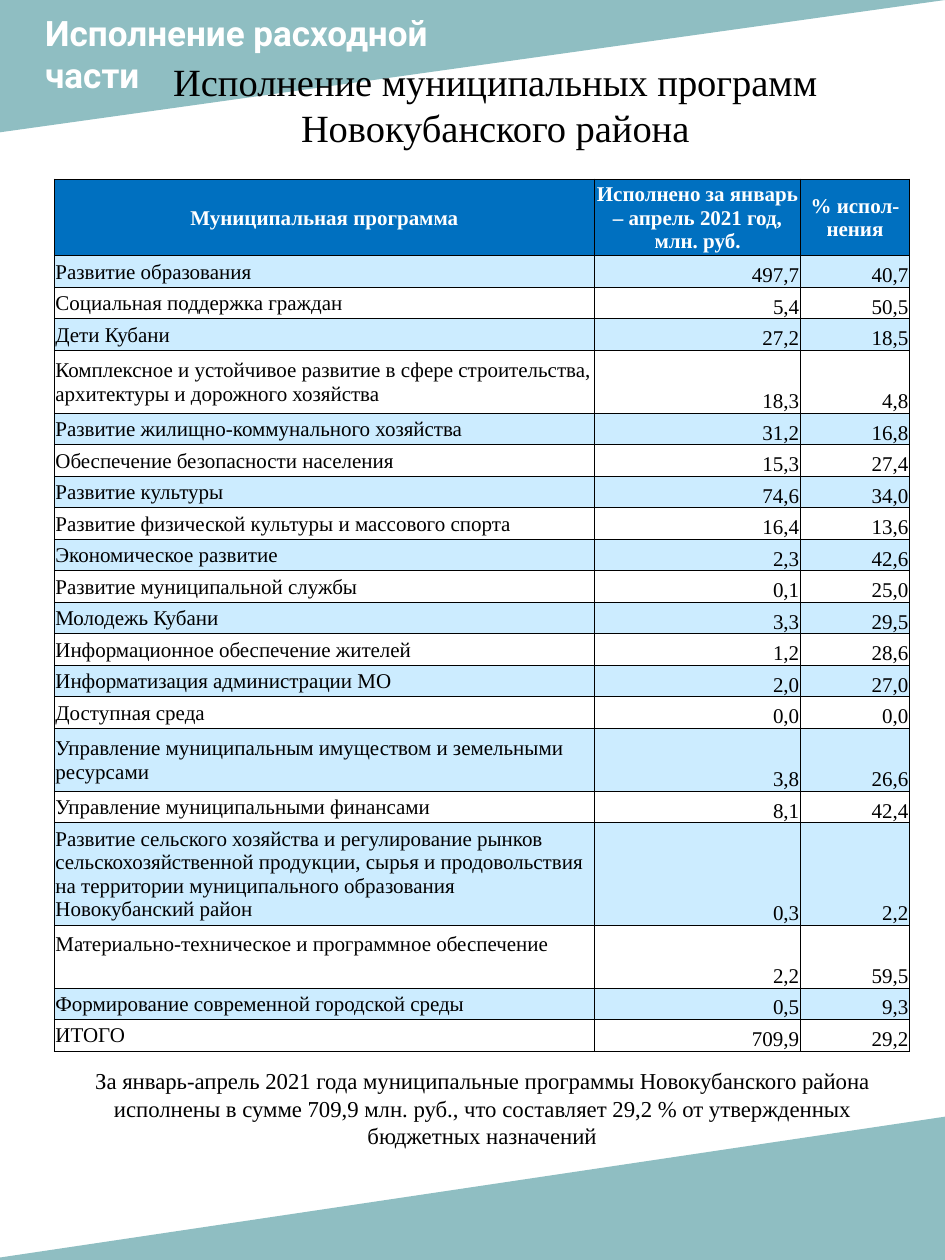
from lxml import etree
from pptx import Presentation
from pptx import util as u
from pptx.dml.color import RGBColor
from pptx.enum import shapes, text
from pptx.oxml import ns

Pt = u.Pt
TEAL = RGBColor(0x51, 0x9A, 0xA0)
BLUE = RGBColor(0x00, 0x70, 0xC0)
PALE_BLUE = RGBColor(0xCC, 0xEC, 0xFF)
WHITE = RGBColor(0xFF, 0xFF, 0xFF)
BLACK = RGBColor(0x00, 0x00, 0x00)
SERIF = "Times New Roman"
LEFT, CENTER, RIGHT = text.PP_ALIGN.LEFT, text.PP_ALIGN.CENTER, text.PP_ALIGN.RIGHT
MIDDLE, BOTTOM = text.MSO_ANCHOR.MIDDLE, text.MSO_ANCHOR.BOTTOM


def write_text(frame, content, alignment, color, font_format):
    frame.text = content
    for paragraph in frame.paragraphs:
        paragraph.alignment = alignment
        for run in paragraph.runs:
            for name, value in font_format.items():
                setattr(run.font, name, value)
            run.font.color.rgb = color


def add_borders(cell):
    properties = cell._tc.get_or_add_tcPr()
    for position, side in enumerate(("lnL", "lnR", "lnT", "lnB")):
        line = etree.Element(ns.qn(f"a:{side}"), w=str(Pt(0.5)))
        fill = etree.SubElement(line, ns.qn("a:solidFill"))
        etree.SubElement(fill, ns.qn("a:srgbClr"), val=str(BLACK))
        properties.insert(position, line)


presentation = Presentation()
presentation.slide_width, presentation.slide_height = Pt(540), Pt(720)
slide = presentation.slides.add_slide(presentation.slide_layouts[6])

# Translucent corner triangles
for box, flip in (((0, 0, 540, 75.6), "flipH"), ((-9.36, 637.92, 550.8, 82.08), "flipV")):
    triangle = slide.shapes.add_shape(shapes.MSO_SHAPE.RIGHT_TRIANGLE, *map(Pt, box))
    triangle.shadow.inherit = False
    triangle.rotation = 180
    triangle._element.spPr.xfrm.set(flip, "1")
    triangle.fill.solid()
    triangle.fill.fore_color.rgb = TEAL
    color = triangle._element.spPr.find(ns.qn("a:solidFill"))[0]
    etree.SubElement(color, ns.qn("a:alpha"), val="64000")
    triangle.line.fill.background()

# Section label, title and closing summary
text_boxes = (
    ((18.72, 2.88, 350.64, 55.44), "Исполнение расходной\nчасти", LEFT, WHITE,
     {"name": "Roboto", "size": Pt(20), "bold": True}),
    ((46.08, 29.52, 473.76, 59.76), "Исполнение муниципальных программ Новокубанского района",
     CENTER, BLACK, {"name": SERIF, "size": Pt(22)}),
    ((30.96, 606.24, 488.88, 54.72),
     "За январь-апрель 2021 года муниципальные программы Новокубанского района "
     "исполнены в сумме 709,9 млн. руб., что составляет 29,2 % от утвержденных "
     "бюджетных назначений", CENTER, BLACK, {"name": SERIF, "size": Pt(13)}),
)
for box, content, alignment, color, font_format in text_boxes:
    frame = slide.shapes.add_textbox(*map(Pt, box)).text_frame
    frame.word_wrap = True
    write_text(frame, content, alignment, color, font_format)

# Programme table: name, amount, percentage
header = ("Муниципальная программа", "Исполнено за январь – апрель 2021 год, млн. руб.",
          "% испол-нения")
programs = (
    ("Развитие образования", "497,7", "40,7"),
    ("Социальная поддержка граждан", "5,4", "50,5"),
    ("Дети Кубани", "27,2", "18,5"),
    ("Комплексное и устойчивое развитие в сфере строительства, архитектуры и дорожного "
     "хозяйства", "18,3", "4,8"),
    ("Развитие жилищно-коммунального хозяйства", "31,2", "16,8"),
    ("Обеспечение безопасности населения", "15,3", "27,4"),
    ("Развитие культуры", "74,6", "34,0"),
    ("Развитие физической культуры и массового спорта", "16,4", "13,6"),
    ("Экономическое развитие", "2,3", "42,6"),
    ("Развитие муниципальной службы", "0,1", "25,0"),
    ("Молодежь Кубани", "3,3", "29,5"),
    ("Информационное обеспечение жителей", "1,2", "28,6"),
    ("Информатизация администрации МО", "2,0", "27,0"),
    ("Доступная среда", "0,0", "0,0"),
    ("Управление муниципальным имуществом и земельными ресурсами", "3,8", "26,6"),
    ("Управление муниципальными финансами", "8,1", "42,4"),
    ("Развитие сельского хозяйства и регулирование рынков сельскохозяйственной продукции, "
     "сырья и продовольствия на территории муниципального образования Новокубанский район",
     "0,3", "2,2"),
    ("Материально-техническое и программное обеспечение", "2,2", "59,5"),
    ("Формирование современной городской среды", "0,5", "9,3"),
    ("ИТОГО", "709,9", "29,2"),
)
rows = (header, *programs)
tall_rows = {0: 36, 4: 36, 15: 36, 17: 53.3, 18: 36}
raised_row = 18
table_frame = slide.shapes.add_table(len(rows), 3, Pt(30.96), Pt(102.24), Pt(488.88), Pt(503.28))
table = table_frame.table
for column, width in zip(table.columns, (308.88, 117.6, 62.4)):
    column.width = Pt(width)

for row_index, values in enumerate(rows):
    table.rows[row_index].height = Pt(tall_rows.get(row_index, 18))
    is_header = row_index == 0
    row_fill = BLUE if is_header else PALE_BLUE if row_index % 2 else WHITE
    for column_index, value in enumerate(values):
        cell = table.cell(row_index, column_index)
        is_number = column_index > 0 and not is_header
        cell_format = {"margin_left": Pt(0.72), "margin_top": Pt(0.72),
                       "margin_right": Pt(0.72), "margin_bottom": 0,
                       "vertical_anchor": BOTTOM if is_number else MIDDLE}
        if row_index == raised_row and not is_number:
            cell_format["margin_bottom"] = Pt(14)
        for name, setting in cell_format.items():
            setattr(cell, name, setting)
        cell.fill.solid()
        cell.fill.fore_color.rgb = row_fill
        add_borders(cell)
        alignment = CENTER if is_header else RIGHT if is_number else LEFT
        write_text(cell.text_frame, value, alignment, WHITE if is_header else BLACK,
                   {"name": SERIF, "size": Pt(12), "bold": is_header})
table_frame.height = Pt(503.28)

presentation.save("out.pptx")
